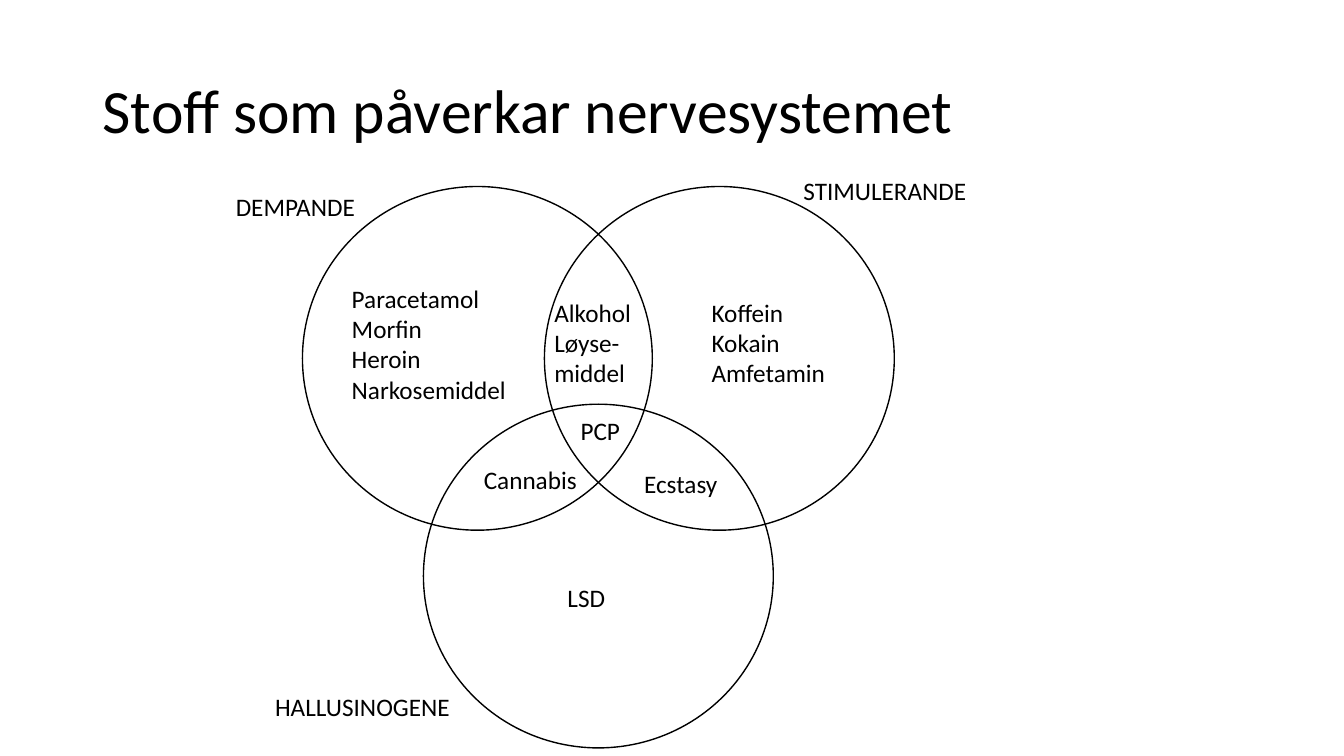
from dataclasses import dataclass

from pptx import Presentation
from pptx.dml.color import RGBColor
from pptx.enum.shapes import MSO_SHAPE
from pptx.enum.text import MSO_ANCHOR
from pptx.slide import Slide
from pptx.util import Emu, Pt

PX = 9144
BLACK = RGBColor(0, 0, 0)
FONT = "Calibri"
ELLIPSE = MSO_SHAPE.OVAL
TOP = MSO_ANCHOR.TOP
MIDDLE = MSO_ANCHOR.MIDDLE
CIRCLE_WIDTH, CIRCLE_HEIGHT = 347, 341
CIRCLE_LEFT, CIRCLE_TOP = 300, 185
CIRCLE_STEP, CIRCLE_DROP = 120, 216


@dataclass(frozen=True)
class Label:
    left: int
    top: int
    width: int
    height: int
    lines: tuple[str, ...]
    size: int = 18
    anchor: MSO_ANCHOR = TOP
    spacing: float = 1.0


TITLE = Label(92, 40, 1150, 145, ("Stoff som påverkar nervesystemet",), 44, MIDDLE, 0.9)
LABELS = (
    Label(339, 276, 202, 131, ("Paracetamol", "Morfin", "Heroin", "Narkosemiddel")),
    Label(540, 290, 120, 101, ("Alkohol", "Løyse-middel")),
    Label(696, 290, 143, 101, ("Koffein", "Kokain", "Amfetamin")),
    Label(553, 573, 121, 40, ("LSD",)),
    Label(566, 407, 63, 40, ("PCP",)),
    Label(629, 460, 101, 40, ("Ecstasy",)),
    Label(470, 456, 121, 40, ("Cannabis",)),
    Label(224, 185, 217, 40, ("DEMPANDE",)),
    Label(787, 169, 213, 40, ("STIMULERANDE",)),
    Label(263, 681, 256, 40, ("HALLUSINOGENE",)),
)


def px(length: int) -> Emu:
    return Emu(length * PX)


def draw_circle(page: Slide, left: int, top: int) -> None:
    circle = page.shapes.add_shape(
        ELLIPSE, px(left), px(top), px(CIRCLE_WIDTH), px(CIRCLE_HEIGHT)
    )
    circle.shadow.inherit = False
    circle.fill.background()
    circle.line.color.rgb = BLACK
    circle.line.width = Pt(1)


def draw_label(page: Slide, label: Label) -> None:
    box = page.shapes.add_textbox(
        px(label.left), px(label.top), px(label.width), px(label.height)
    )
    frame = box.text_frame
    frame.word_wrap = True
    frame.vertical_anchor = label.anchor
    for index, line in enumerate(label.lines):
        para = frame.add_paragraph() if index else frame.paragraphs[0]
        para.line_spacing = label.spacing
        span = para.add_run()
        span.text = line
        span.font.name = FONT
        span.font.size = Pt(label.size)
        span.font.color.rgb = BLACK


def main() -> None:
    deck = Presentation()
    deck.slide_width, deck.slide_height = px(1333), px(750)
    page = deck.slides.add_slide(deck.slide_layouts[6])
    draw_label(page, TITLE)
    for index in range(3):
        drop = CIRCLE_DROP if index == 1 else 0
        draw_circle(page, CIRCLE_LEFT + index * CIRCLE_STEP, CIRCLE_TOP + drop)
    for label in LABELS:
        draw_label(page, label)
    deck.save("out.pptx")


if __name__ == "__main__":
    main()
